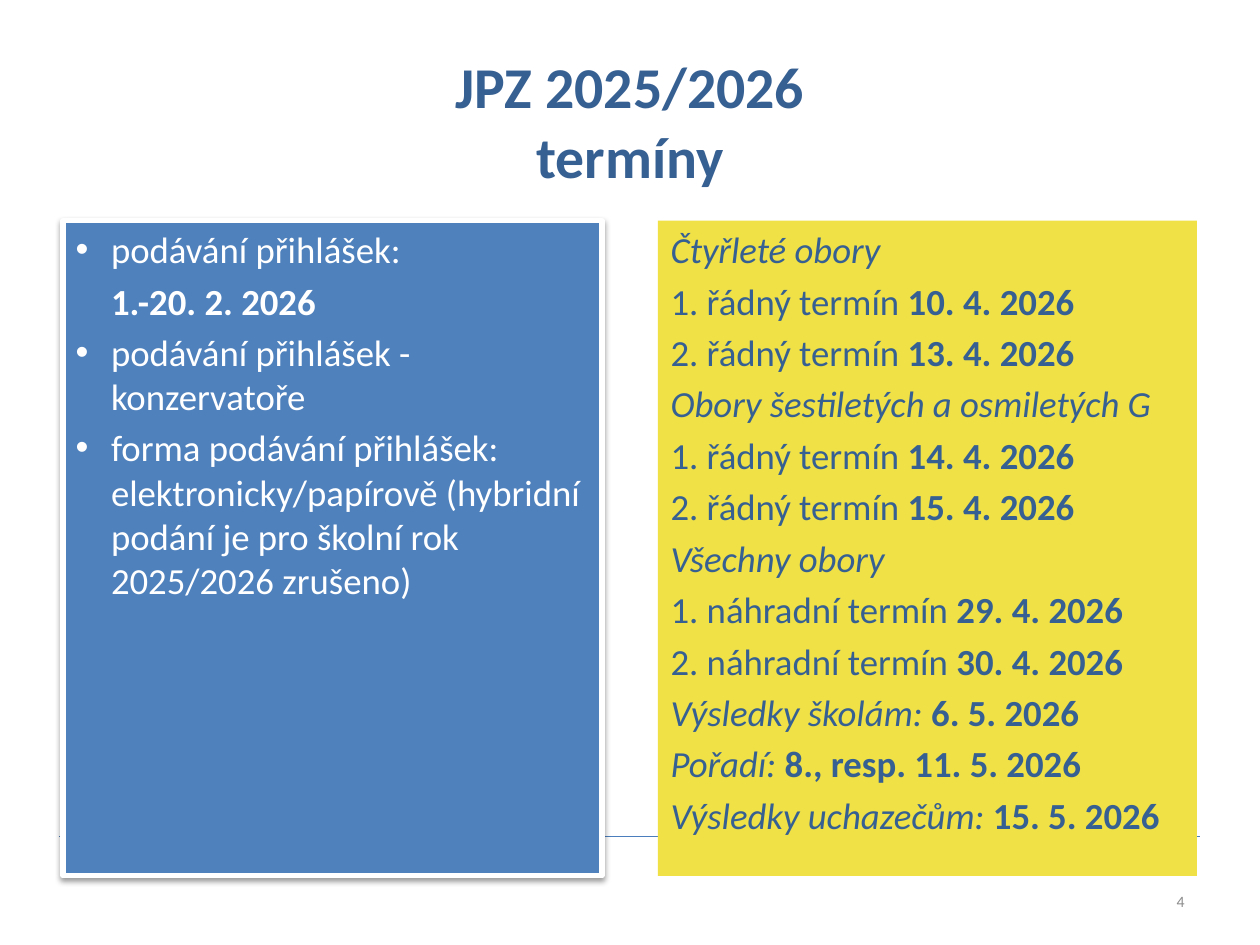
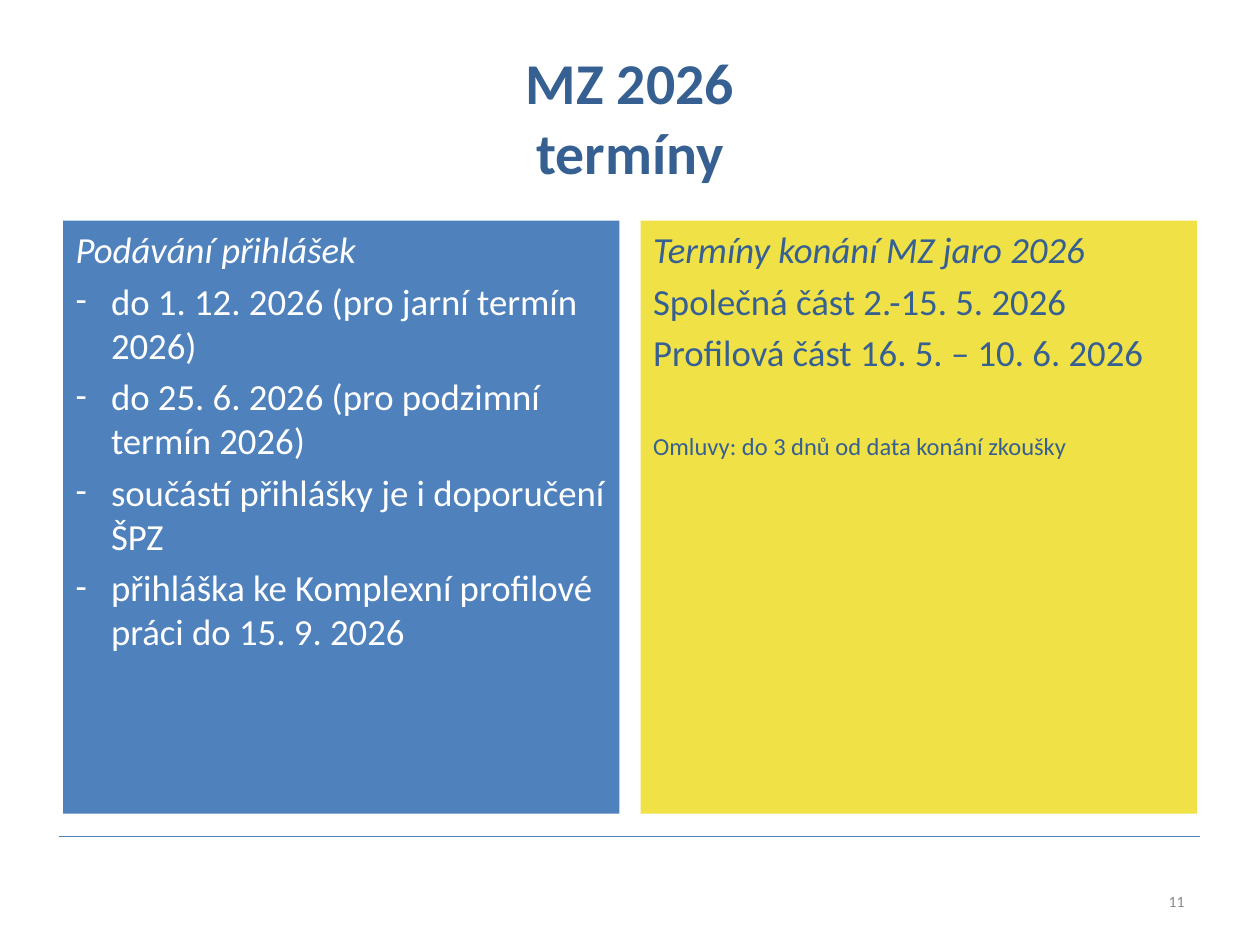
import pptx
import pptx.dml.color
import pptx.enum.text
import pptx.oxml
import pptx.oxml.ns
import pptx.util
from lxml import etree

Pt = pptx.util.Pt
RGBColor = pptx.dml.color.RGBColor
ALIGN = pptx.enum.text.PP_ALIGN
ANCHOR = pptx.enum.text.MSO_ANCHOR
qn = pptx.oxml.ns.qn

FONT = "Calibri"
NAVY = RGBColor(0x37, 0x60, 0x92)
BLUE = RGBColor(0x4F, 0x81, 0xBD)
YELLOW = RGBColor(0xF0, 0xE1, 0x46)
WHITE = RGBColor(0xFF, 0xFF, 0xFF)
GREY = RGBColor(0x8C, 0x8C, 0x8C)
RULE_BLUE = RGBColor(0x4B, 0x7E, 0xBC)

PAGE_WIDTH, PAGE_HEIGHT = 720, 540
MARGIN = 36
PANEL_TOP = 126
INDENT = 20.25
BODY_SIZE = 21
TWO_CONTENT_LAYOUT = 3
SHADOW = (
    '<a:effectLst xmlns:a="http://schemas.openxmlformats.org/drawingml/2006/main">'
    '<a:outerShdw blurRad="{blur}" dist="{distance}" dir="5400000" rotWithShape="0">'
    '<a:srgbClr val="000000"><a:alpha val="38000"/></a:srgbClr>'
    '</a:outerShdw></a:effectLst>'
)


def write(para, text, size=BODY_SIZE, color=NAVY, bold=False, italic=False):
    span = para.add_run()
    span.text = text
    font = span.font
    font.name, font.size = FONT, Pt(size)
    font.bold, font.italic = bold, italic
    font.color.rgb = color


def place(box, left, top, width, height):
    box.left, box.top = Pt(left), Pt(top)
    box.width, box.height = Pt(width), Pt(height)


def set_bullet(para, bullet, indent):
    """Give the paragraph a hanging bullet, or only a left indent without one."""
    properties = para._p.get_or_add_pPr()
    properties.set("marL", str(Pt(indent)))
    properties.set("indent", str(-Pt(indent) if bullet else 0))
    if bullet:
        face = "Arial" if bullet == "•" else FONT
        etree.SubElement(properties, qn("a:buFont")).set("typeface", face)
        etree.SubElement(properties, qn("a:buChar")).set("char", bullet)
    else:
        etree.SubElement(properties, qn("a:buNone"))


def item(*spans, bullet=None, indent=0, size=BODY_SIZE, before=None):
    """Describe one paragraph; each span is text or (text, style letters b and i)."""
    spans = [(span, "") if isinstance(span, str) else span for span in spans]
    return dict(spans=spans, bullet=bullet, indent=INDENT if bullet else indent,
                size=size, before=before)


def date_item(label, date, label_style=""):
    return item((label + " ", label_style), (date, "b"))


def fill_panel(box, left, width, height, fill, color, items):
    place(box, left, PANEL_TOP, width, height)
    box.fill.solid()
    box.fill.fore_color.rgb = fill
    frame = box.text_frame
    frame.auto_size = pptx.enum.text.MSO_AUTO_SIZE.NONE
    for number, entry in enumerate(items):
        para = frame.add_paragraph() if number else frame.paragraphs[0]
        set_bullet(para, entry["bullet"], entry["indent"])
        if entry["before"]:
            para.space_before = Pt(entry["before"])
        for text, style in entry["spans"]:
            write(para, text, size=entry["size"], color=color,
                  bold="b" in style, italic="i" in style)


def frame_with_shadow(box):
    box.line.color.rgb = WHITE
    box.line.width = Pt(3)
    shadow = SHADOW.format(blur=Pt(3.1), distance=Pt(1.6))
    box.element.spPr.append(pptx.oxml.parse_xml(shadow))


def add_footer_rule(page):
    """Draw the thin line behind everything else on the page."""
    rule = page.shapes.add_connector(
        pptx.enum.shapes.MSO_CONNECTOR.STRAIGHT, Pt(34), Pt(478), Pt(686), Pt(478))
    rule.line.color.rgb = RULE_BLUE
    rule.line.width = Pt(0.75)
    etree.SubElement(rule.element.spPr, qn("a:effectLst"))
    page.shapes.element.insert(2, rule.element)


def add_page_number(page, number):
    box = page.shapes.add_textbox(Pt(516), Pt(500.5), Pt(168), Pt(28.75))
    frame = box.text_frame
    frame.word_wrap = True
    frame.vertical_anchor = ANCHOR.MIDDLE
    para = frame.paragraphs[0]
    para.alignment = ALIGN.RIGHT
    write(para, str(number), size=9, color=GREY)


def add_title(page, heading, height):
    title = page.shapes.title
    place(title, MARGIN, 21.6, PAGE_WIDTH - 2 * MARGIN, height)
    frame = title.text_frame
    frame.auto_size = pptx.enum.text.MSO_AUTO_SIZE.NONE
    frame.vertical_anchor = ANCHOR.MIDDLE
    para = frame.paragraphs[0]
    para.alignment = ALIGN.CENTER
    write(para, heading, size=33, bold=True)
    para.add_line_break()
    write(para, "termíny", size=33, bold=True)


def add_dates_page(deck, heading, number, title_height, panel_size,
                   applications, dates):
    """Add a page with a blue panel on applications and a yellow one on dates."""
    page = deck.slides.add_slide(deck.slide_layouts[TWO_CONTENT_LAYOUT])
    width, height = panel_size
    add_footer_rule(page)
    add_title(page, heading, title_height)
    left_panel, right_panel = page.placeholders[1], page.placeholders[2]
    fill_panel(left_panel, MARGIN, width, height, BLUE, WHITE, applications)
    fill_panel(right_panel, PAGE_WIDTH - MARGIN - width, width, height,
               YELLOW, NAVY, dates)
    add_page_number(page, number)
    return left_panel


def main():
    deck = pptx.Presentation()
    deck.slide_width, deck.slide_height = Pt(PAGE_WIDTH), Pt(PAGE_HEIGHT)

    entrance_panel = add_dates_page(
        deck, "JPZ 2025/2026", 4, 94.5, (308, 374.5),
        applications=[
            item("podávání přihlášek:", bullet="•"),
            item(("1.-20. 2. 2026", "b"), indent=INDENT),
            item("podávání přihlášek - konzervatoře", bullet="•"),
            item("forma podávání přihlášek: elektronicky/papírově (hybridní "
                 "podání je pro školní rok 2025/2026 zrušeno)", bullet="•"),
        ],
        dates=[
            item(("Čtyřleté obory", "i")),
            date_item("1. řádný termín", "10. 4. 2026"),
            date_item("2. řádný termín", "13. 4. 2026"),
            item(("Obory šestiletých a osmiletých G", "i")),
            date_item("1. řádný termín", "14. 4. 2026"),
            date_item("2. řádný termín", "15. 4. 2026"),
            item(("Všechny obory", "i")),
            date_item("1. náhradní termín", "29. 4. 2026"),
            date_item("2. náhradní termín", "30. 4. 2026"),
            date_item("Výsledky školám:", "6. 5. 2026", "i"),
            date_item("Pořadí:", "8., resp. 11. 5. 2026", "i"),
            date_item("Výsledky uchazečům:", "15. 5. 2026", "i"),
        ])
    frame_with_shadow(entrance_panel)

    add_dates_page(
        deck, "MZ 2026", 11, 90, (318, 339),
        applications=[
            item(("Podávání přihlášek", "i")),
            item("do 1. 12. 2026 (pro jarní termín 2026)", bullet="-"),
            item("do 25. 6. 2026 (pro podzimní termín 2026)", bullet="-"),
            item("součástí přihlášky je i doporučení ŠPZ", bullet="-"),
            item("přihláška ke Komplexní profilové práci do 15. 9. 2026",
                 bullet="-"),
        ],
        dates=[
            item(("Termíny konání MZ jaro 2026", "i")),
            item("Společná část 2.-15. 5. 2026"),
            item("Profilová část 16. 5. – 10. 6. 2026"),
            item("Omluvy: do 3 dnů od data konání zkoušky", size=14, before=32.5),
        ])

    deck.save("out.pptx")


if __name__ == "__main__":
    import pptx.enum.shapes
    main()
